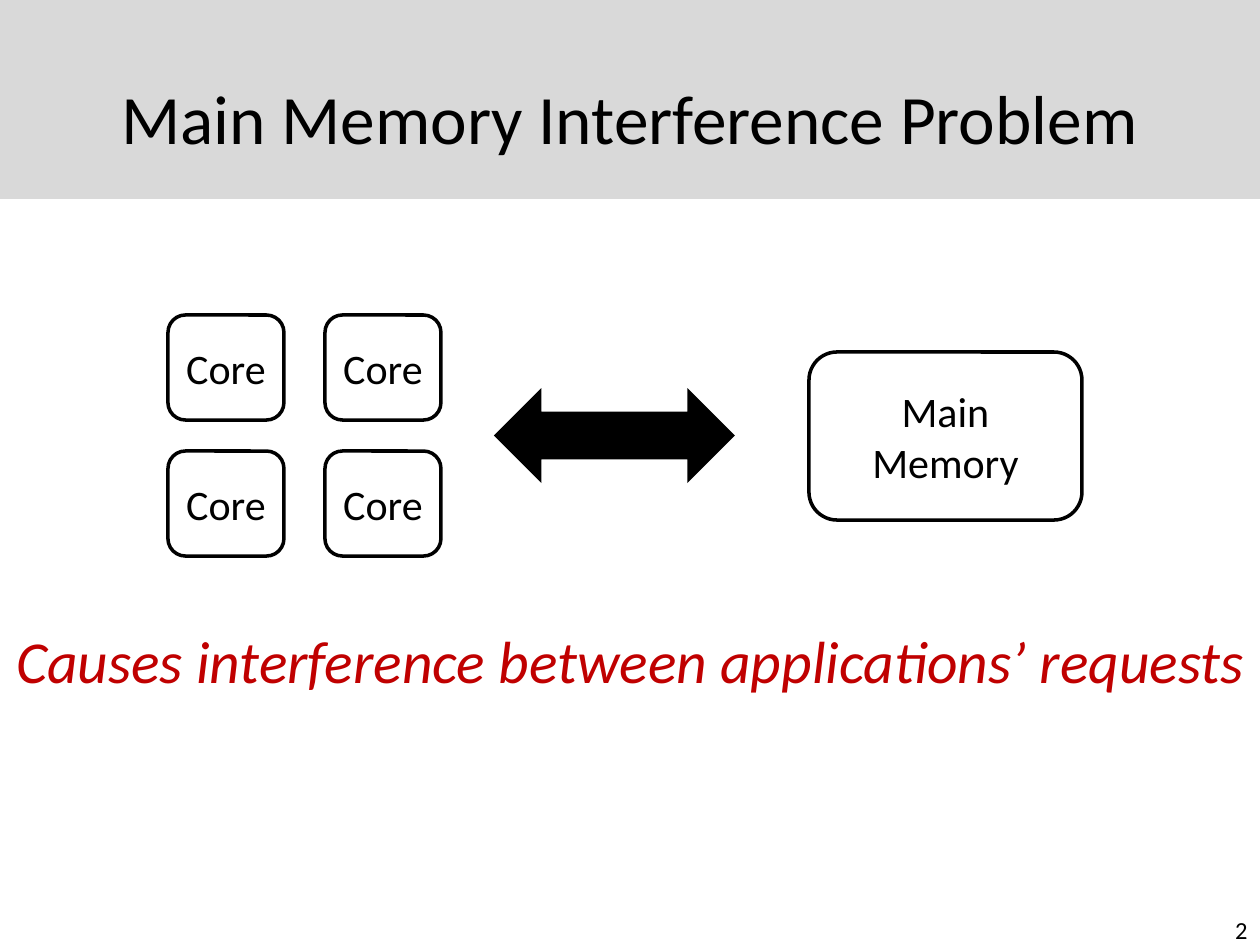
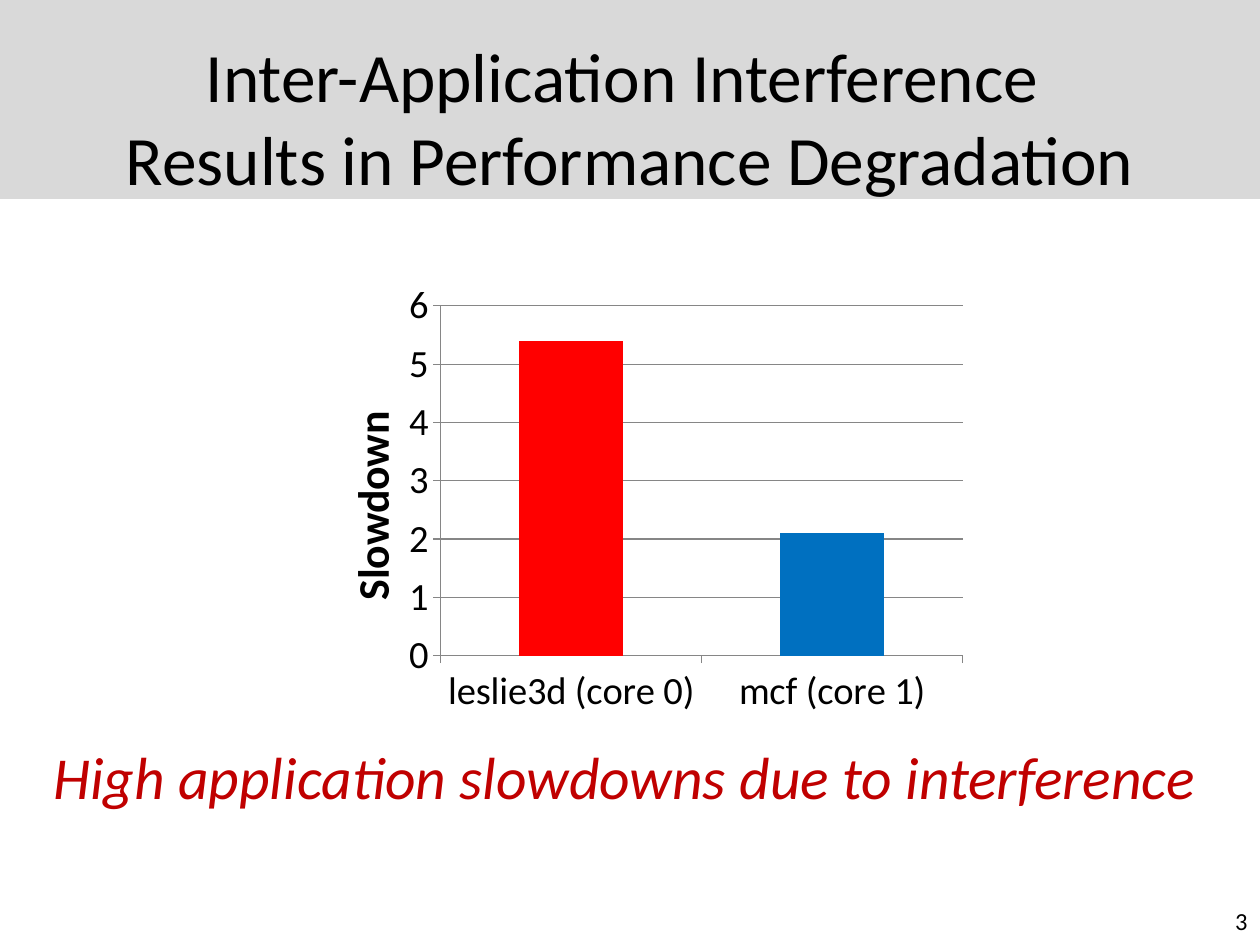
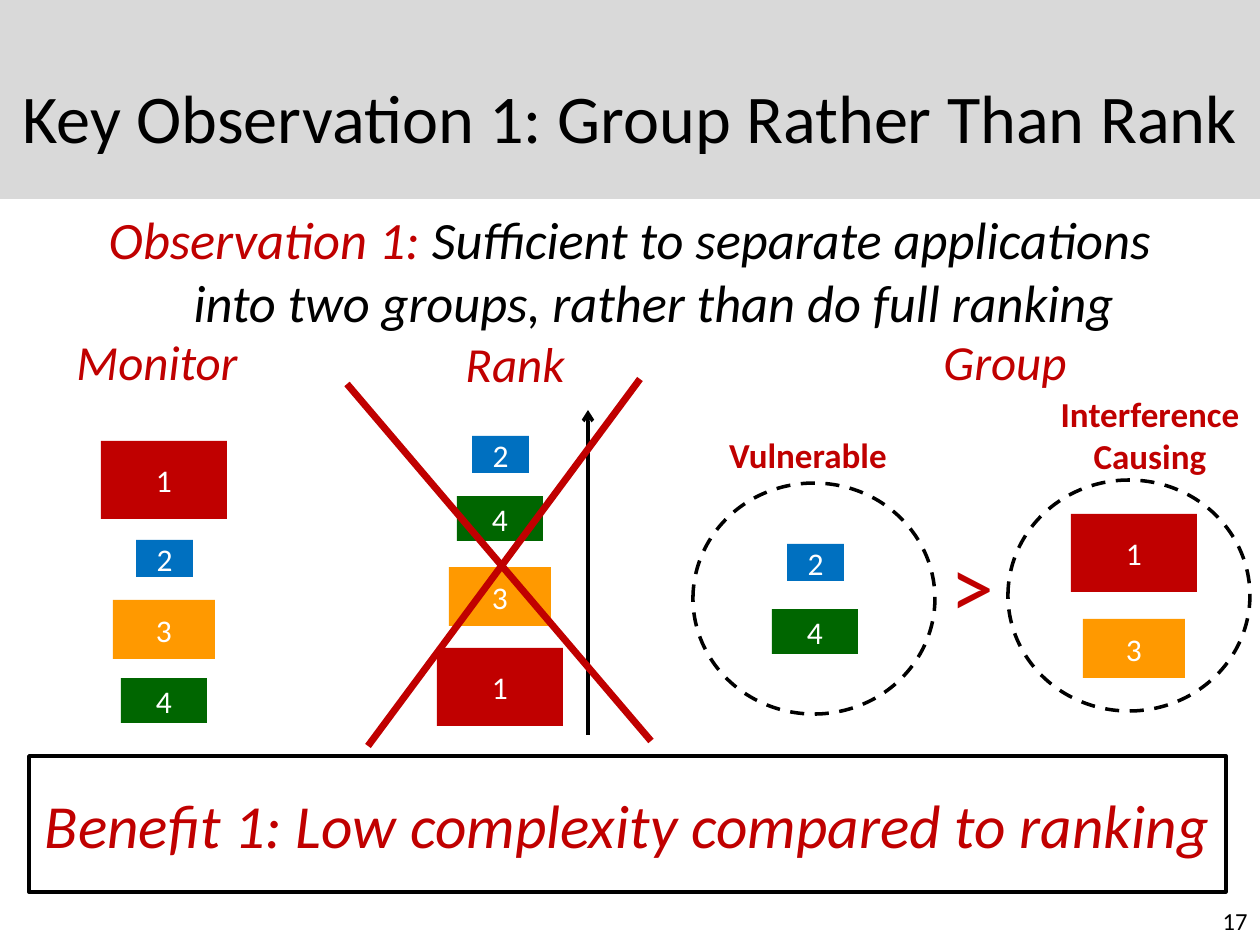
from dataclasses import dataclass
from typing import NamedTuple, Optional, Sequence

from lxml.etree import SubElement
from pptx import Presentation
from pptx.chart.data import CategoryChartData
from pptx.dml.color import RGBColor
from pptx.enum.chart import XL_CHART_TYPE, XL_TICK_MARK
from pptx.enum.dml import MSO_LINE
from pptx.enum.shapes import MSO_CONNECTOR, MSO_SHAPE
from pptx.enum.text import MSO_ANCHOR, MSO_AUTO_SIZE, PP_ALIGN
from pptx.oxml.ns import qn
from pptx.util import Emu, Pt


@dataclass(frozen=True)
class Theme:
    font: str = "Calibri"
    black: str = "000000"
    white: str = "FFFFFF"
    band: str = "D9D9D9"
    accent: str = "C00000"
    red: str = "FF0000"
    blue: str = "0070C0"
    orange: str = "FF9900"
    green: str = "006600"
    grid: str = "868686"
    title: float = 39.6
    caption: float = 34
    benefit: float = 35
    observation: float = 30
    heading: float = 28
    node: float = 24
    group: float = 20
    block: float = 18
    number: float = 14
    greater: float = 50
    axis_title: float = 25
    axis: float = 22
    outline: float = 2
    cross: float = 4


class Area(NamedTuple):
    left: int
    top: int
    width: int
    height: int


class BlockKind(NamedTuple):
    width: int
    height: int
    color: str


class Column(NamedTuple):
    center: int
    tops: dict


class Line(NamedTuple):
    start: tuple
    end: tuple
    color: str
    width: float
    arrow: bool = False


class Label(NamedTuple):
    text: str
    area: Area
    size: float
    bold: bool = False
    italic: bool = False


THEME = Theme()
PIXELS_PER_INCH = 126
SLIDE = Area(0, 0, 1260, 945)
TITLE_AREA = Area(63, 38, 1134, 157)
CORE = Area(168, 315, 116, 105)
CORE_STEP_X, CORE_STEP_Y = 157, 136

BLOCKS = {
    1: BlockKind(126, 78, THEME.accent),
    2: BlockKind(57, 37, THEME.blue),
    3: BlockKind(102, 59, THEME.orange),
    4: BlockKind(86, 45, THEME.green),
}
COLUMNS = [
    Column(164, {1: 441, 2: 540, 3: 600, 4: 678}),
    Column(500, {2: 436, 4: 496, 3: 567, 1: 648}),
    Column(815, {2: 544, 4: 609}),
    Column(1134, {1: 514, 3: 619}),
]
GROUP_CIRCLES = [Area(693, 483, 242, 231), Area(1008, 480, 242, 231)]
LABELS = [
    Label("Monitor", Area(52, 325, 210, 72), THEME.heading, italic=True),
    Label("Rank", Area(410, 327, 210, 72), THEME.heading, italic=True),
    Label("Group", Area(900, 325, 210, 72), THEME.heading, italic=True),
    Label("Vulnerable", Area(707, 427, 202, 55), THEME.group, bold=True),
    Label("Interference\nCausing", Area(1040, 386, 220, 97), THEME.group, bold=True),
    Label(">", Area(932, 525, 80, 118), THEME.greater),
]
RANK_LINES = [
    Line((588, 735), (588, 410), THEME.black, THEME.outline, arrow=True),
    Line((347, 384), (651, 741), THEME.accent, THEME.cross),
    Line((640, 379), (368, 746), THEME.accent, THEME.cross),
]


def px(value: int) -> Emu:
    return Emu(round(value * 914400 / PIXELS_PER_INCH))


def emus(area: Sequence[int]) -> list:
    return [px(value) for value in area]


def rgb(color: str) -> RGBColor:
    return RGBColor.from_string(color)


def style_font(font, size: float, color: str, bold: bool = False, italic: bool = False) -> None:
    font.name = THEME.font
    font.size = Pt(size)
    font.color.rgb = rgb(color)
    font.bold = bold
    font.italic = italic


def write(paragraph, text: str, *, size: float, color: str = THEME.black,
          bold: bool = False, italic: bool = False, align=PP_ALIGN.CENTER) -> None:
    paragraph.alignment = align
    for index, line in enumerate(text.split("\v")):
        if index:
            paragraph.add_line_break()
        span = paragraph.add_run()
        span.text = line
        style_font(span.font, size, color, bold, italic)


def write_lines(frame, text: str, **style) -> None:
    for index, line in enumerate(text.split("\n")):
        paragraph = frame.add_paragraph() if index else frame.paragraphs[0]
        write(paragraph, line, **style)


def add_text(slide, area: Area, text: str, anchor=MSO_ANCHOR.TOP, **style):
    box = slide.shapes.add_textbox(*emus(area))
    frame = box.text_frame
    frame.word_wrap = True
    frame.vertical_anchor = anchor
    if text:
        write_lines(frame, text, **style)
    return box


def add_figure(slide, kind, area: Area, fill: Optional[str] = None,
               outline: Optional[str] = None, text: str = "", **style):
    figure = slide.shapes.add_shape(kind, *emus(area))
    figure.shadow.inherit = False
    if fill:
        figure.fill.solid()
        figure.fill.fore_color.rgb = rgb(fill)
    else:
        figure.fill.background()
    if outline:
        figure.line.color.rgb = rgb(outline)
        figure.line.width = Pt(THEME.outline)
    else:
        figure.line.fill.background()
    if text:
        figure.text_frame.word_wrap = True
        figure.text_frame.vertical_anchor = MSO_ANCHOR.MIDDLE
        write_lines(figure.text_frame, text, **style)
    return figure


def add_line(slide, line: Line) -> None:
    connector = slide.shapes.add_connector(
        MSO_CONNECTOR.STRAIGHT, *emus(line.start), *emus(line.end))
    connector.line.color.rgb = rgb(line.color)
    connector.line.width = Pt(line.width)
    properties = connector.element.spPr
    if line.arrow:
        SubElement(properties.find(qn("a:ln")), qn("a:tailEnd"), type="arrow")
    SubElement(properties, qn("a:effectLst"))


def add_band(slide) -> None:
    band = add_figure(slide, MSO_SHAPE.RECTANGLE, Area(0, 0, 1260, 199), THEME.band)
    slide.slide_layout.shapes.element.insert(2, band.element)


def add_slide(deck, title: str, number: int, title_area: Area = TITLE_AREA,
              title_size: float = THEME.title, number_top: int = 896):
    slide = deck.slides.add_slide(deck.slide_layouts.get_by_name("Title Only"))
    heading = slide.shapes.title
    heading.left, heading.top, heading.width, heading.height = emus(title_area)
    frame = heading.text_frame
    frame.auto_size = MSO_AUTO_SIZE.NONE
    frame.vertical_anchor = MSO_ANCHOR.MIDDLE
    write_lines(frame, title, size=title_size)
    add_text(slide, Area(966, number_top, 294, 50), str(number), MSO_ANCHOR.MIDDLE,
             size=THEME.number, align=PP_ALIGN.RIGHT)
    return slide


def add_caption(slide, area: Area, text: str) -> None:
    add_text(slide, area, text, MSO_ANCHOR.MIDDLE,
             size=THEME.caption, color=THEME.accent, italic=True)


def set_layout(parent, index: int, **values) -> None:
    for old in parent.findall(qn("c:layout")):
        parent.remove(old)
    layout = SubElement(parent, qn("c:layout"))
    manual = SubElement(layout, qn("c:manualLayout"))
    for name, value in values.items():
        SubElement(manual, qn(f"c:{name}"), val=str(value))
    parent.insert(index, layout)


def add_slowdown_chart(slide, area: Area) -> None:
    data = CategoryChartData()
    data.categories = ["leslie3d (core 0)", "mcf (core 1)"]
    data.add_series("Series 1", [5.4, 2.1])
    chart = slide.shapes.add_chart(
        XL_CHART_TYPE.COLUMN_CLUSTERED, *emus(area), data).chart
    chart.has_legend = False
    chart.has_title = False
    style_font(chart.font, THEME.axis, THEME.black)

    plot = chart.plots[0]
    plot.gap_width = 150
    plot.vary_by_categories = False
    for index, color in enumerate([THEME.red, THEME.blue]):
        fill = plot.series[0].points[index].format.fill
        fill.solid()
        fill.fore_color.rgb = rgb(color)

    values = chart.value_axis
    values.minimum_scale, values.maximum_scale, values.major_unit = 0, 6, 1
    values.has_major_gridlines = True
    for axis in (chart.category_axis, values):
        axis.major_tick_mark = XL_TICK_MARK.OUTSIDE
        style_font(axis.tick_labels.font, THEME.axis, THEME.black)
    for item in (chart.category_axis, values, values.major_gridlines):
        item.format.line.color.rgb = rgb(THEME.grid)
        item.format.line.width = Pt(0.75)

    title = values.axis_title
    write_lines(title.text_frame, "Slowdown", size=THEME.axis_title, bold=True)
    body = title.element.find(".//" + qn("a:bodyPr"))
    body.set("rot", "-5400000")
    body.set("vert", "horz")
    set_layout(title.element, 1, xMode="edge", yMode="edge", x=0.06, y=0.29)
    set_layout(chart.element.find(".//" + qn("c:plotArea")), 0,
               layoutTarget="inner", xMode="edge", yMode="edge",
               x=0.215, y=0.073, w=0.764, h=0.776)


def build_problem(deck) -> None:
    slide = add_slide(deck, "Main Memory Interference Problem", 2, number_top=905)
    add_band(slide)
    add_caption(slide, Area(0, 622, 1260, 76),
                "Causes interference between applications’ requests")
    for row in range(2):
        for column in range(2):
            area = CORE._replace(left=CORE.left + column * CORE_STEP_X,
                                 top=CORE.top + row * CORE_STEP_Y)
            add_figure(slide, MSO_SHAPE.ROUNDED_RECTANGLE, area, THEME.white,
                       THEME.black, "Core", size=THEME.node)
    add_figure(slide, MSO_SHAPE.ROUNDED_RECTANGLE, Area(809, 352, 273, 168),
               outline=THEME.black, text="Main Memory", size=THEME.node)
    add_figure(slide, MSO_SHAPE.LEFT_RIGHT_ARROW, Area(494, 388, 241, 95), THEME.black)


def build_degradation(deck) -> None:
    slide = add_slide(
        deck, "Inter-Application Interference \vResults in Performance Degradation", 3)
    add_caption(slide, Area(0, 738, 1248, 76),
                "High application slowdowns due to interference")
    add_slowdown_chart(slide, Area(294, 273, 683, 451))


def build_observation(deck) -> None:
    slide = add_slide(deck, "Key Observation 1: Group Rather Than Rank", 17,
                      Area(0, 38, 1260, 157), 39)
    paragraph = add_text(slide, Area(63, 201, 1134, 140), "").text_frame.paragraphs[0]
    indent = px(48)
    properties = paragraph._p.get_or_add_pPr()
    properties.set("marL", str(indent))
    properties.set("indent", str(-indent))
    write(paragraph, "Observation 1:", size=THEME.observation,
          color=THEME.accent, italic=True)
    write(paragraph, " Sufficient to separate applications into two groups, "
          "rather than do full ranking", size=THEME.observation, italic=True)

    add_figure(slide, MSO_SHAPE.RECTANGLE, Area(29, 756, 1197, 136), THEME.white,
               THEME.black, "Benefit 1: Low complexity compared to ranking",
               size=THEME.benefit, color=THEME.accent, italic=True)
    for area in GROUP_CIRCLES:
        circle = add_figure(slide, MSO_SHAPE.OVAL, area, outline=THEME.black)
        circle.line.dash_style = MSO_LINE.DASH
    for label in LABELS:
        add_text(slide, label.area, label.text, size=label.size, color=THEME.accent,
                 bold=label.bold, italic=label.italic)
    for column in COLUMNS:
        for number, top in column.tops.items():
            kind = BLOCKS[number]
            area = Area(column.center - kind.width // 2, top, kind.width, kind.height)
            add_figure(slide, MSO_SHAPE.RECTANGLE, area, kind.color, text=str(number),
                       size=THEME.block, color=THEME.white)
    for line in RANK_LINES:
        add_line(slide, line)


def main() -> None:
    deck = Presentation()
    deck.slide_width, deck.slide_height = px(SLIDE.width), px(SLIDE.height)
    build_problem(deck)
    build_degradation(deck)
    build_observation(deck)
    deck.save("out.pptx")


if __name__ == "__main__":
    main()
